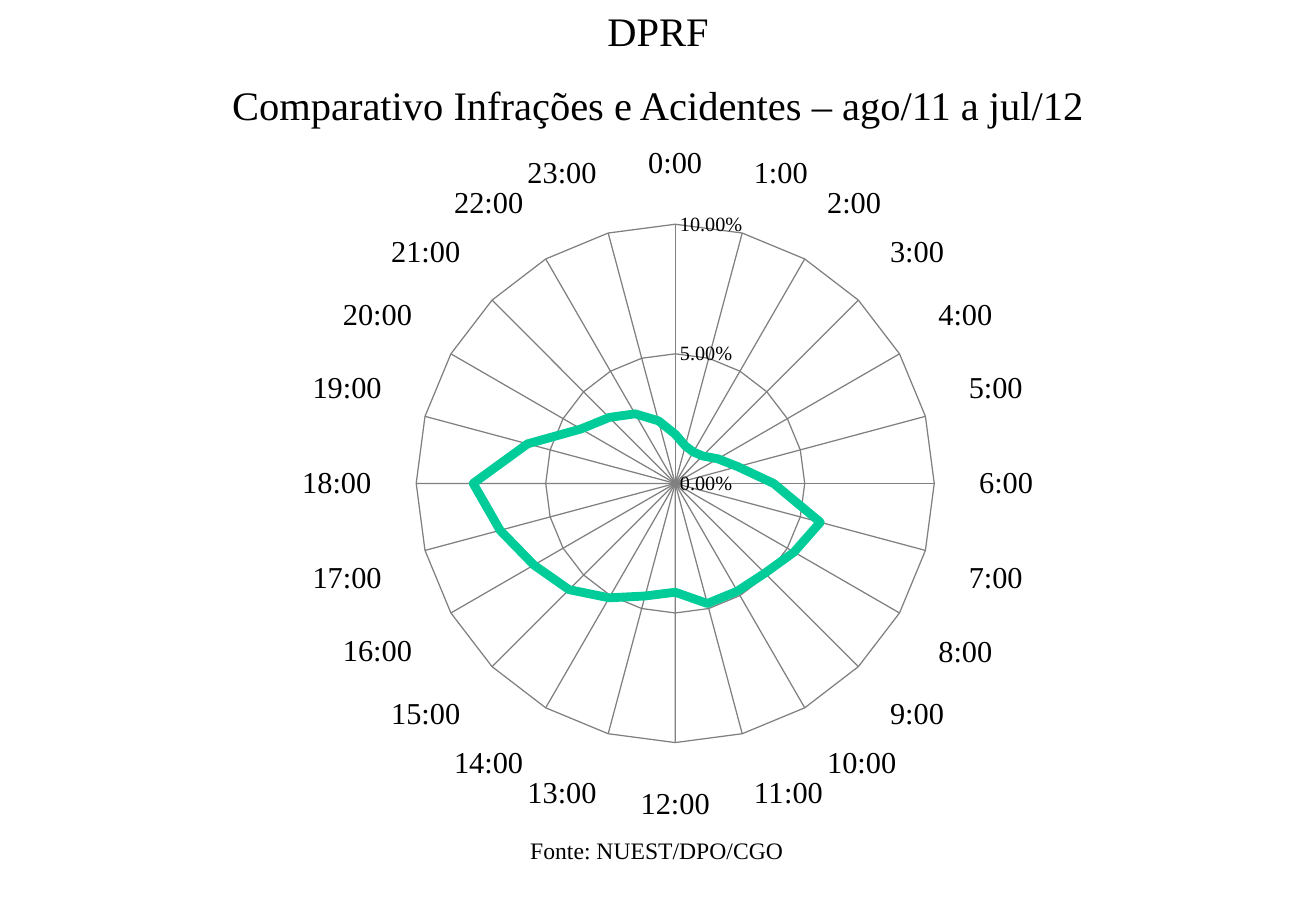
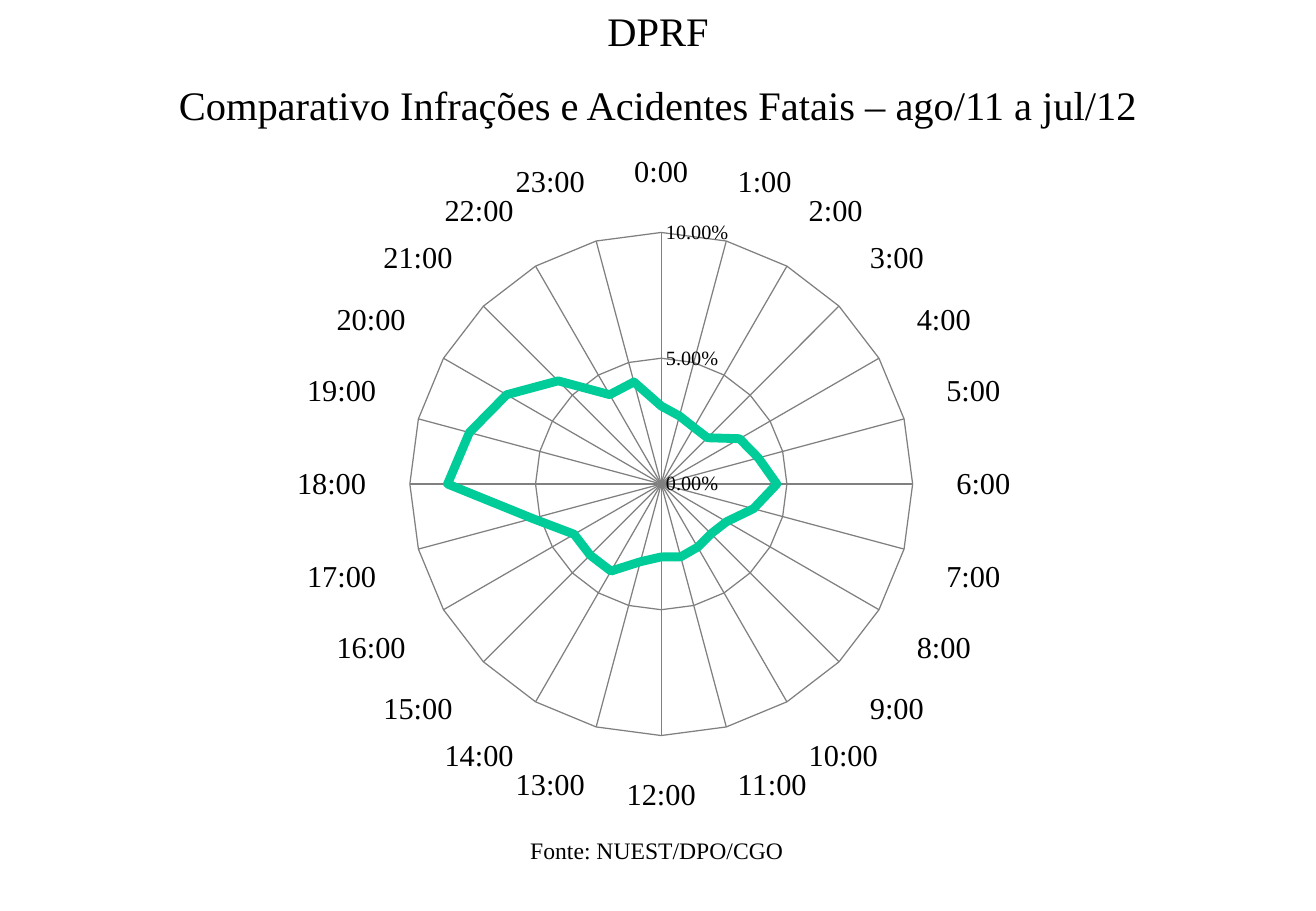
"""Build two slides with hourly radar charts of road accidents."""
from dataclasses import dataclass

from pptx import Presentation
from pptx.chart.data import CategoryChartData
from pptx.dml.color import RGBColor
from pptx.enum.chart import XL_CHART_TYPE, XL_TICK_MARK
from pptx.enum.text import PP_ALIGN
from pptx.util import Inches, Pt

FONT = "Times New Roman"
BLACK, GREEN, GRAY = "000000", "00CC99", "808080"
HOURS = [f"{hour}:00" for hour in range(24)]
SOURCE = "Fonte: NUEST/DPO/CGO"


@dataclass(frozen=True)
class Box:
    left: float
    top: float
    width: float
    height: float

    def lengths(self):
        return [Inches(v) for v in (self.left, self.top, self.width, self.height)]


@dataclass(frozen=True)
class RadarSlide:
    subtitle: str
    box: Box
    values: tuple[float, ...]


TITLE_BOX = Box(0, 0, 10.84, 1.12)
SOURCE_BOX = Box(3.7, 6.83, 3.42, 0.49)
SLIDES = (
    RadarSlide(
        "Comparativo Infrações e Acidentes – ago/11 a jul/12",
        Box(0.5, 1.09, 10, 5.78),
        (0.019, 0.015, 0.014, 0.015, 0.019, 0.025, 0.038, 0.058,
         0.053, 0.049, 0.048, 0.048, 0.042, 0.045, 0.051, 0.058,
         0.063, 0.07, 0.078, 0.059, 0.042, 0.036, 0.031, 0.025),
    ),
    RadarSlide(
        "Comparativo Infrações e Acidentes Fatais – ago/11 a jul/12",
        Box(0.5, 1.17, 9.77, 5.63),
        (0.031, 0.028, 0.026, 0.026, 0.036, 0.04, 0.046, 0.038,
         0.03, 0.028, 0.029, 0.03, 0.029, 0.032, 0.04, 0.04,
         0.04, 0.053, 0.085, 0.079, 0.071, 0.058, 0.041, 0.042),
    ),
)


def rgb(color: str) -> RGBColor:
    return RGBColor.from_string(color)


def style_font(font, size: float) -> None:
    font.name = FONT
    font.size = Pt(size)
    font.color.rgb = rgb(BLACK)


def style_line(line, color: str, width: float) -> None:
    line.color.rgb = rgb(color)
    line.width = Pt(width)


def add_text(s, box: Box, lines: list[str], size: float) -> None:
    tf = s.shapes.add_textbox(*box.lengths()).text_frame
    tf.word_wrap = True
    tf.text = "\n".join(lines)
    for i, p in enumerate(tf.paragraphs):
        p.alignment = PP_ALIGN.CENTER
        if i:
            p.space_before = Pt(15)
        for r in p.runs:
            style_font(r.font, size)


def add_radar(s, box: Box, values: tuple[float, ...]) -> None:
    data = CategoryChartData(number_format="0.00%")
    data.categories = HOURS
    data.add_series("Series 1", values)
    chart = s.shapes.add_chart(XL_CHART_TYPE.RADAR, *box.lengths(), data).chart
    chart.has_legend = False
    chart.has_title = False
    style_font(chart.font, 18)
    plot = chart.plots[0]
    plot.vary_by_categories = False
    style_line(plot.series[0].format.line, GREEN, 5.25)

    for axis, size in ((chart.category_axis, 18), (chart.value_axis, 12)):
        axis.has_major_gridlines = True
        axis.major_tick_mark = axis.minor_tick_mark = XL_TICK_MARK.NONE
        style_line(axis.major_gridlines.format.line, GRAY, 0.75)
        style_line(axis.format.line, GRAY, 0.75)
        style_font(axis.tick_labels.font, size)
    axis = chart.value_axis
    axis.minimum_scale, axis.maximum_scale, axis.major_unit = 0, 0.1, 0.05
    axis.tick_labels.number_format = "0.00%"
    axis.tick_labels.number_format_is_linked = False


def main() -> None:
    prs = Presentation()
    prs.slide_width, prs.slide_height = Inches(10.84), Inches(7.5)
    for radar in SLIDES:
        s = prs.slides.add_slide(prs.slide_layouts[6])
        add_text(s, SOURCE_BOX, [SOURCE], 14)
        add_text(s, TITLE_BOX, ["DPRF", radar.subtitle], 24)
        add_radar(s, radar.box, radar.values)
    prs.save("out.pptx")


if __name__ == "__main__":
    main()
